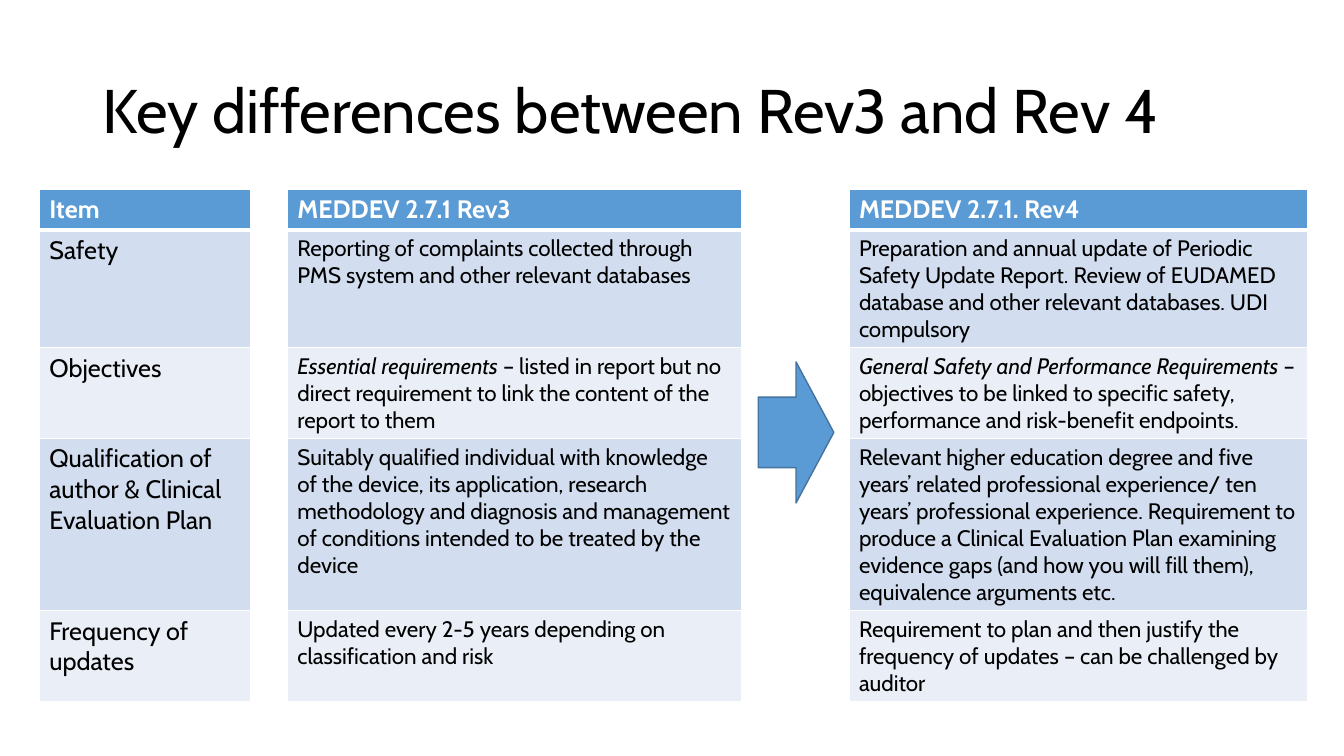
"""Build the slide comparing MEDDEV 2.7.1 Rev3 with Rev4."""
import pptx
import pptx.dml.color
import pptx.enum.shapes
import pptx.enum.text
import pptx.oxml
import pptx.oxml.ns
import pptx.util

Inches, Pt = pptx.util.Inches, pptx.util.Pt
RGBColor = pptx.dml.color.RGBColor
BLACK = RGBColor(0x00, 0x00, 0x00)
WHITE = RGBColor(0xFF, 0xFF, 0xFF)
BLUE = RGBColor(0x5B, 0x9B, 0xD5)
DARK_BLUE = RGBColor(0x43, 0x73, 0x9E)
BANDS = RGBColor(0xEA, 0xEF, 0xF7), RGBColor(0xD2, 0xDE, 0xEF)
FONT = "Cabin"

COLUMN_WIDTHS = [2.1, 0.36, 4.51, 1.06, 4.55]
ROW_HEIGHTS = [0.4, 1.17, 0.9, 1.71, 0.9]
TEXT_COLUMNS = [0, 2, 4]
COMPARISON = [
    ("Item", "MEDDEV 2.7.1 Rev3", "MEDDEV 2.7.1. Rev4"),
    ("Safety",
     "Reporting of complaints collected through PMS system and other relevant databases",
     "Preparation and annual update of Periodic Safety Update Report. Review of EUDAMED "
     "database and other relevant databases. UDI compulsory"),
    ("Objectives",
     ("Essential requirements ",
      "– listed in report but no direct requirement to link the content of the report to them"),
     ("General Safety and Performance Requirements",
      " – objectives to be linked to specific safety, performance and risk-benefit endpoints.")),
    ("Qualification of author & Clinical Evaluation Plan",
     "Suitably qualified individual with knowledge of the device, its application, research "
     "methodology and diagnosis and management of conditions intended to be treated by the device",
     "Relevant higher education degree and five years’ related professional experience/ ten "
     "years’ professional experience. Requirement to produce a Clinical Evaluation Plan examining "
     "evidence gaps (and how you will fill them), equivalence arguments etc."),
    ("Frequency of updates",
     "Updated every 2-5 years depending on classification and risk",
     "Requirement to plan and then justify the frequency of updates – can be challenged by auditor"),
]


def style(paragraph, size, color, bold=False):
    paragraph.font.name = FONT
    paragraph.font.size = Pt(size)
    paragraph.font.bold = bold
    paragraph.font.color.rgb = color


def add_border(cell, side, width):
    cell._tc.get_or_add_tcPr().append(pptx.oxml.parse_xml(
        f'<a:ln{side} {pptx.oxml.ns.nsdecls("a")} w="{Pt(width)}"><a:solidFill>'
        f'<a:srgbClr val="{WHITE}"/></a:solidFill></a:ln{side}>'))


deck = pptx.Presentation()
deck.slide_width, deck.slide_height = Inches(13.33), Inches(7.5)
slide = deck.slides.add_slide(deck.slide_layouts[6])

title = slide.shapes.add_textbox(Inches(0.92), Inches(0.4), Inches(11.5), Inches(1.45)).text_frame
title.word_wrap = True
title.vertical_anchor = pptx.enum.text.MSO_ANCHOR.MIDDLE
heading = title.paragraphs[0]
heading.text = "Key differences between Rev3 and Rev 4"
heading.line_spacing = 0.9
style(heading, 44, BLACK)

table = slide.shapes.add_table(
    len(ROW_HEIGHTS), len(COLUMN_WIDTHS), Inches(0.39), Inches(1.88),
    Inches(sum(COLUMN_WIDTHS)), Inches(sum(ROW_HEIGHTS))).table
table.first_row = table.horz_banding = False
for column, width in zip(table.columns, COLUMN_WIDTHS):
    column.width = Inches(width)
for row, height in zip(table.rows, ROW_HEIGHTS):
    row.height = Inches(height)

for row_index, entries in enumerate(COMPARISON):
    is_header = row_index == 0
    for column_index in range(len(COLUMN_WIDTHS)):
        cell = table.cell(row_index, column_index)
        for side in "LRTB":
            thick = (is_header and side == "B") or (row_index == 1 and side == "T")
            add_border(cell, side, 3 if thick else 1)
        if column_index not in TEXT_COLUMNS:
            cell.fill.background()
            continue
        cell.fill.solid()
        cell.fill.fore_color.rgb = BLUE if is_header else BANDS[row_index % 2]
        entry = entries[TEXT_COLUMNS.index(column_index)]
        paragraph = cell.text_frame.paragraphs[0]
        if isinstance(entry, tuple):
            for part, italic in zip(entry, (True, False)):
                run = paragraph.add_run()
                run.text = part
                run.font.italic = italic
        else:
            paragraph.text = entry
        style(paragraph, 18 if is_header or column_index == 0 else 16,
              WHITE if is_header else BLACK, is_header)

arrow = slide.shapes.add_shape(
    pptx.enum.shapes.MSO_SHAPE.RIGHT_ARROW, Inches(7.52), Inches(3.59), Inches(0.75), Inches(1.4))
arrow.shadow.inherit = False
arrow.fill.solid()
arrow.fill.fore_color.rgb = BLUE
arrow.line.color.rgb = DARK_BLUE
arrow.line.width = Pt(1)

deck.save("out.pptx")
